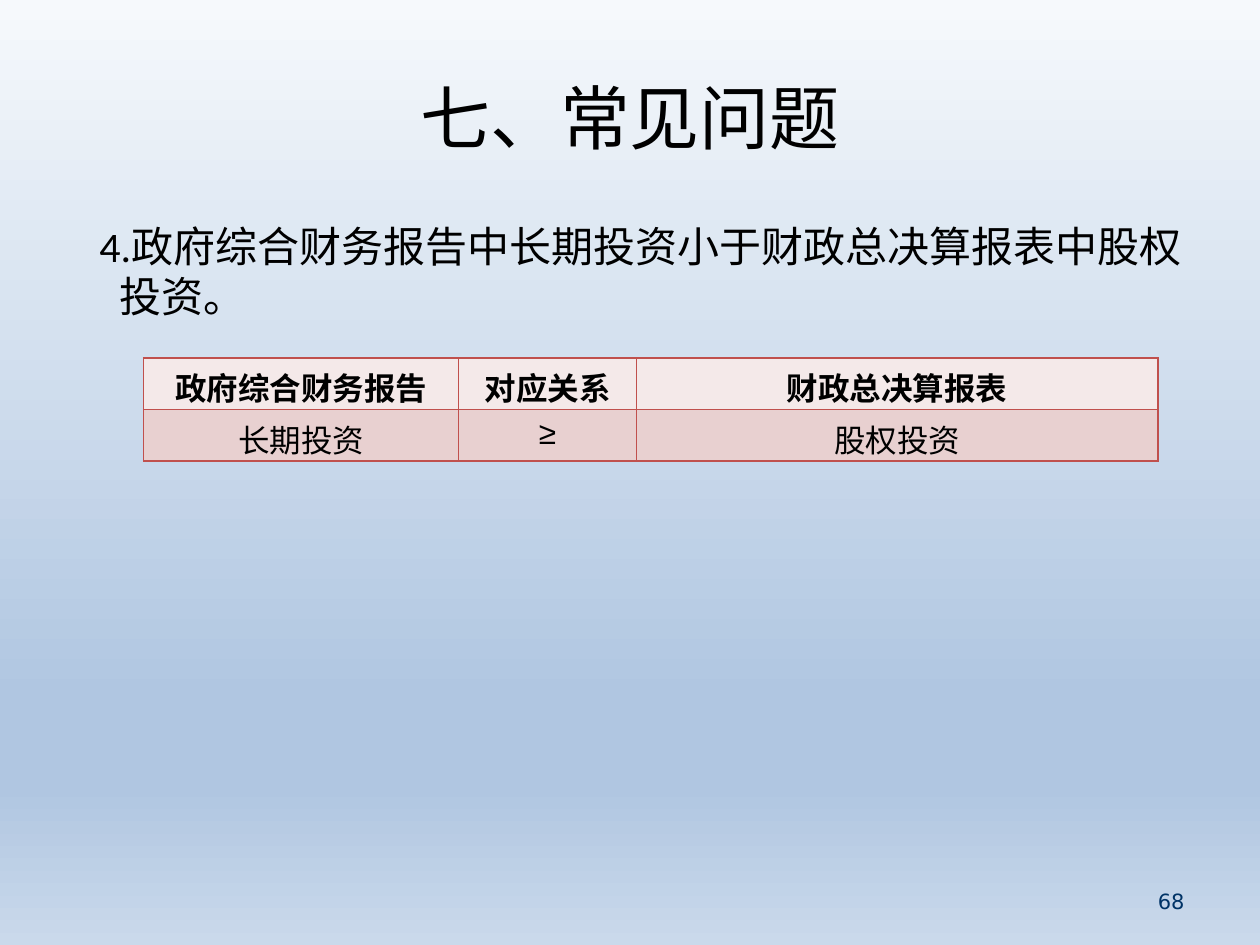
from lxml.etree import SubElement
from pptx import Presentation
from pptx.dml.color import RGBColor
from pptx.enum.text import MSO_ANCHOR as Anchor, PP_ALIGN as Align
from pptx.oxml.ns import qn
from pptx.util import Inches, Pt

BACKGROUND = [(0, "F6F9FC"), (74, "B0C6E1"), (83, "B0C6E1"), (100, "CAD9EB")]
COLUMNS = [2.5, 1.41, 4.14]
ROW_HEIGHT = 0.41
ROWS = [
    ("F4E9E9", True, ["政府综合财务报告", "对应关系", "财政总决算报表"]),
    ("E8D0D0", False, ["长期投资", "≥", "股权投资"]),
]


def color(value):
    """Turn a hex string into a colour."""
    return RGBColor.from_string(value)


def write(frame, text, size, font="Arial", fill="000000", bold=False,
          align=Align.LEFT, anchor=Anchor.TOP):
    """Write one formatted paragraph into a text frame and return it."""
    frame.word_wrap = True
    frame.vertical_anchor = anchor
    para = frame.paragraphs[0]
    para.alignment = align
    span = para.add_run()
    span.text = text
    span.font.size = Pt(size)
    span.font.name = font
    span.font.bold = bold
    span.font.color.rgb = color(fill)
    return para


def add_text(page, place, text, size, **style):
    """Add a text box and return its paragraph."""
    box = page.shapes.add_textbox(*map(Inches, place))
    return write(box.text_frame, text, size, **style)


def paint_background(page, stops):
    """Fill the page with a gradient running from top to bottom."""
    fill = page.background.fill
    fill.gradient()
    fill.gradient_angle = 270
    stop_list = page.background._cSld.find(".//" + qn("a:gsLst"))
    stop_list.clear()
    for percent, value in stops:
        stop = SubElement(stop_list, qn("a:gs"), pos=str(percent * 1000))
        SubElement(stop, qn("a:srgbClr"), val=value)


def add_borders(cell, value, width):
    """Draw a solid line on all four sides of a cell."""
    properties = cell._tc.get_or_add_tcPr()
    for side in ("lnL", "lnR", "lnT", "lnB"):
        line = SubElement(properties, qn(f"a:{side}"), w=str(Pt(width)))
        solid = SubElement(line, qn("a:solidFill"))
        SubElement(solid, qn("a:srgbClr"), val=value)


def add_comparison(page, left, top):
    """Add the table that relates the two reports."""
    table = page.shapes.add_table(
        len(ROWS), len(COLUMNS), Inches(left), Inches(top),
        Inches(sum(COLUMNS)), Inches(ROW_HEIGHT * len(ROWS))).table
    for column, width in zip(table.columns, COLUMNS):
        column.width = Inches(width)
    for row, (fill, bold, texts) in zip(table.rows, ROWS):
        row.height = Inches(ROW_HEIGHT)
        for cell, text in zip(row.cells, texts):
            add_borders(cell, "C0504D", 1)
            cell.fill.solid()
            cell.fill.fore_color.rgb = color(fill)
            write(cell.text_frame, text, 18, bold=bold, align=Align.CENTER)


def main():
    """Build the slide and save the deck."""
    deck = Presentation()
    deck.slide_width, deck.slide_height = Inches(10), Inches(7.5)
    page = deck.slides.add_slide(deck.slide_layouts[6])
    paint_background(page, BACKGROUND)
    add_text(page, (0.5, 0.3, 9, 1.25), "七、常见问题", 40,
             align=Align.CENTER, anchor=Anchor.MIDDLE)
    problem = add_text(page, (0.47, 1.7, 9.14, 3.08),
                       "4.政府综合财务报告中长期投资小于财政总决算报表中股权投资。",
                       24, font="Calibri")
    problem.space_before = Pt(4.8)
    indents = problem._p.get_or_add_pPr()
    indents.set("marL", str(Inches(0.38)))
    indents.set("indent", str(Inches(-0.16)))
    add_text(page, (7.17, 6.95, 2.33, 0.4), "68", 12, font="DejaVu Sans",
             fill="003366", align=Align.RIGHT, anchor=Anchor.MIDDLE)
    add_comparison(page, 1.14, 2.84)
    deck.save("out.pptx")


if __name__ == "__main__":
    main()
